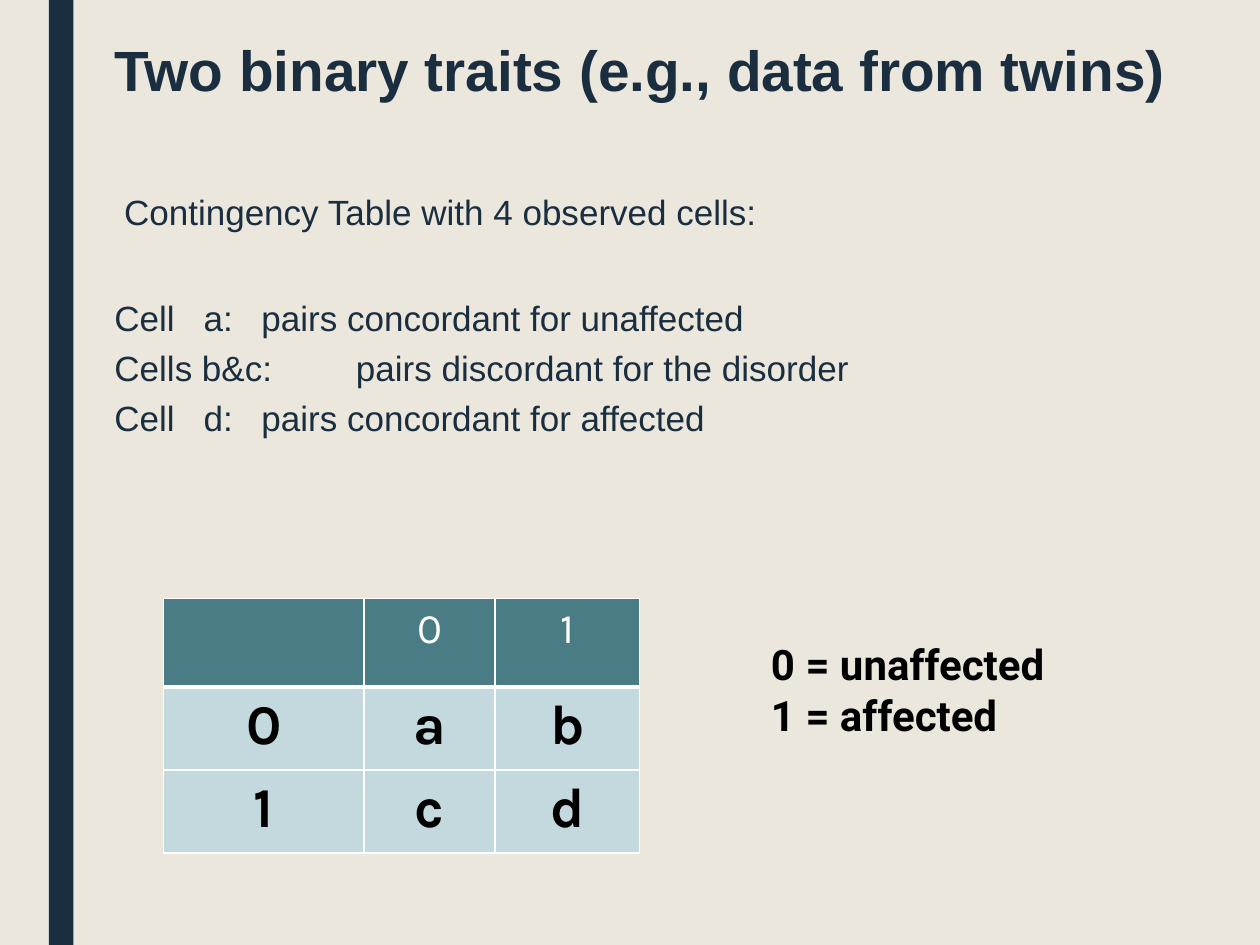
from lxml.etree import SubElement as Sub
from pptx import Presentation
from pptx.dml.color import RGBColor as Rgb
from pptx.enum.shapes import MSO_SHAPE as Kind
from pptx.enum.text import MSO_AUTO_SIZE as Auto, PP_ALIGN as Align
from pptx.oxml.ns import qn
from pptx.util import Pt

NAVY, WHITE, BLACK = "1A2E40", "FFFFFF", "000000"
TEAL, PALE = "4A7C85", "C3D9DD"


def paint(fill, tint):
    fill.solid()
    fill.fore_color.rgb = Rgb.from_string(tint)


def style(para, face, size, tint, bold=False):
    font = para.font
    font.name, font.size, font.bold = face, Pt(size), bold
    paint(font.fill, tint)


def add_bar(slide, x, y, w, h, tint):
    bar = slide.shapes.add_shape(Kind.RECTANGLE, Pt(x), Pt(y), Pt(w), Pt(h))
    bar.shadow.inherit = False
    paint(bar.fill, tint)
    bar.line.fill.background()


def add_text(slide, x, y, w, h, lines, *look):
    frame = slide.shapes.add_textbox(Pt(x), Pt(y), Pt(w), Pt(h)).text_frame
    frame.word_wrap = True
    frame.auto_size = Auto.NONE
    frame.text = "\n".join(lines)
    for para in frame.paragraphs:
        style(para, *look)
    return frame.paragraphs


def set_tabs(para, stops):
    tabs = Sub(para._p.get_or_add_pPr(), qn("a:tabLst"))
    para._p.pPr.insert(0, tabs)
    for stop in stops:
        Sub(tabs, qn("a:tab"), pos=str(Pt(stop)), algn="l")


def set_space(para, line, before):
    para.line_spacing = line
    para.space_before, para.space_after = Pt(before), Pt(2)


def add_edges(cell, base):
    props = cell._tc.get_or_add_tcPr()
    for side, width in (("L", 1), ("R", 1), ("T", 1), ("B", base)):
        edge = Sub(props, qn(f"a:ln{side}"), w=str(Pt(width)))
        Sub(Sub(edge, qn("a:solidFill")), qn("a:srgbClr"), val=WHITE)


def add_grid(slide, x, y, cols, rows, data):
    shape = slide.shapes.add_table(len(rows), len(cols), Pt(x), Pt(y),
                                   Pt(sum(cols)), Pt(sum(rows)))
    grid = shape.table
    grid.first_row = grid.horz_banding = False
    for col, width in zip(grid.columns, cols):
        col.width = Pt(width)
    for r, (row, height) in enumerate(zip(grid.rows, rows)):
        row.height = Pt(height)
        head = r == 0
        for cell, text in zip(row.cells, data[r]):
            add_edges(cell, 3 if head else 1)
            paint(cell.fill, TEAL if head else PALE)
            cell.text = text
            para = cell.text_frame.paragraphs[0]
            para.alignment = Align.CENTER
            look = (24, WHITE) if head else (32, BLACK, True)
            style(para, "Karla", *look)


def main():
    deck = Presentation()
    deck.slide_width, deck.slide_height = Pt(720), Pt(540)
    slide = deck.slides.add_slide(deck.slide_layouts[6])
    paint(slide.background.fill, "EBE7DD")
    add_bar(slide, 28, 0, 14, 540, NAVY)

    title = add_text(slide, 58.3, 21, 680, 60,
                     ["Two binary traits (e.g., data from twins)"],
                     "Arial", 32.4, NAVY, True)
    title[0].line_spacing = 0.89

    intro, *items = add_text(slide, 58.3, 110, 666, 222, [
        "Contingency Table with 4 observed cells:",
        "Cell\ta:\tpairs concordant for unaffected",
        "Cells b&c:\tpairs discordant for the disorder",
        "Cell\td:\tpairs concordant for affected",
    ], "Arial", 20, NAVY)
    set_space(intro, 0.8, 10)
    intro._p.pPr.set("marL", str(Pt(5.5)))
    for item, stops, gap in zip(items, ([51, 84], [138], [51, 84]),
                                (41, 10, 10)):
        set_tabs(item, stops)
        set_space(item, 0.7, gap)

    add_grid(slide, 93.5, 342, [114.5, 75, 82.5], [50.5, 47.5, 47.5],
             [["", "0", "1"], ["0", "a", "b"], ["1", "c", "d"]])
    add_text(slide, 433.5, 361.5, 196.5, 65.5,
             ["0 = unaffected", "1 = affected"], "Roboto", 24, BLACK, True)
    deck.save("out.pptx")


if __name__ == "__main__":
    main()
